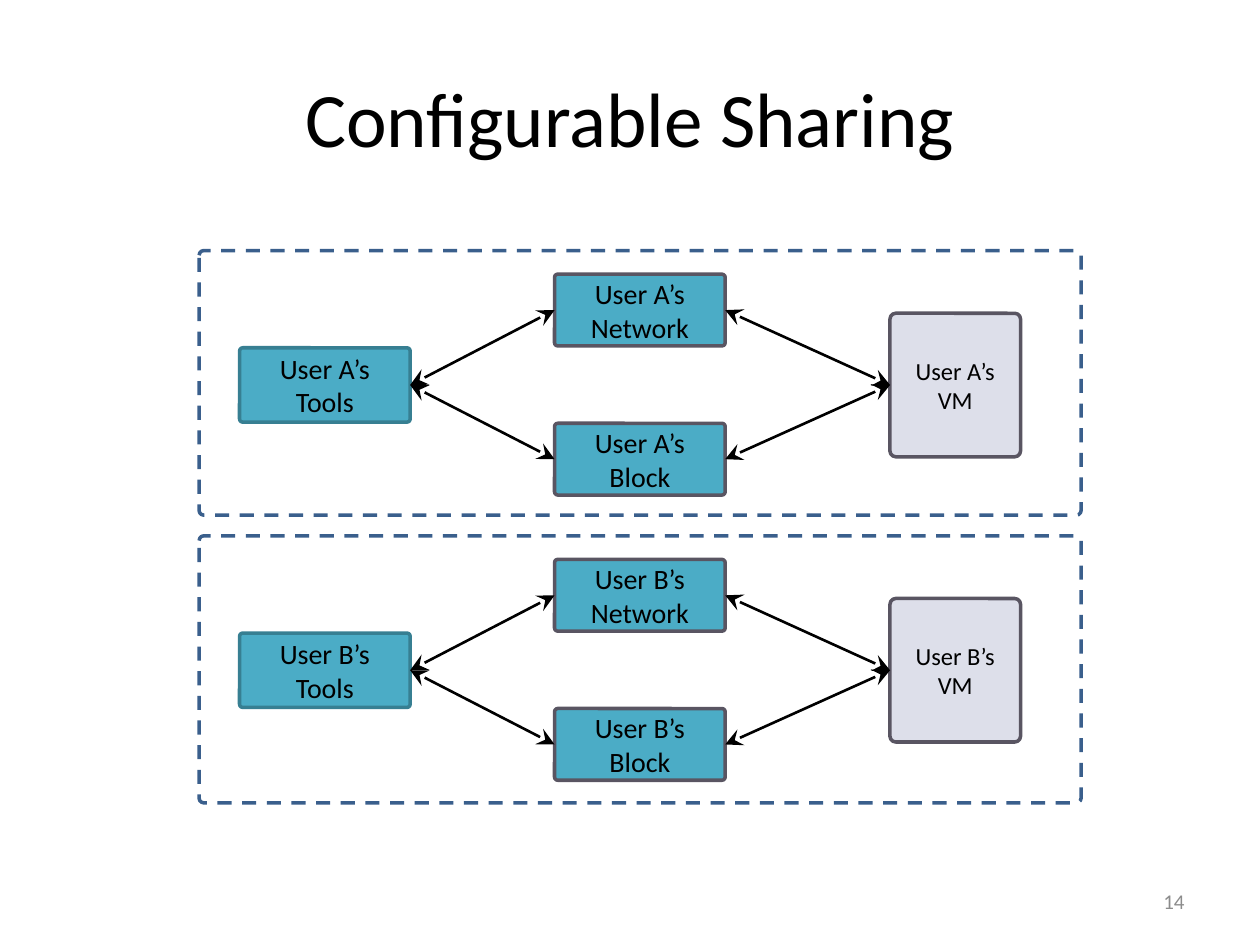
import pptx
import pptx.util
from lxml import etree
from pptx.dml.color import RGBColor
from pptx.enum.dml import MSO_LINE
from pptx.enum.shapes import MSO_CONNECTOR, MSO_SHAPE
from pptx.enum.text import MSO_ANCHOR, PP_ALIGN
from pptx.oxml.ns import qn

Pt = pptx.util.Pt

# Content
TITLE = "Configurable Sharing"
PAGE_NUMBER = "14"
USERS = [  # name, top of frame, height of frame
    ("A", 143.2, 151.2),
    ("B", 306.2, 152.6),
]
PARTS = {  # left, centre below frame top, width, height, fill, line, text size
    "Tools": (136.9, 76.8, 97.5, 42.5, "4BACC6", "377F92", 16),
    "Network": (316.9, 34.0, 97.5, 41, "4BACC6", "595562", 16),
    "Block": (316.9, 119.2, 97.5, 41, "4BACC6", "595562", 16),
    "VM": (508.6, 76.8, 74.6, 82, "DDDFEA", "595562", 14),
}
LINKS = [("Tools", "Network"), ("Tools", "Block"), ("Network", "VM"), ("Block", "VM")]
FRAME_LEFT, FRAME_WIDTH = 113.8, 504
LEFT_SITE, RIGHT_SITE = 1, 3


def colour(hex_code):
    return RGBColor.from_string(hex_code)


def write(frame, text, size=16, color="000000", align=PP_ALIGN.CENTER):
    frame.word_wrap = True
    frame.vertical_anchor = MSO_ANCHOR.MIDDLE
    paragraph = frame.paragraphs[0]
    paragraph.alignment = align
    run = paragraph.add_run()
    run.text = text
    run.font.name = "Calibri"
    run.font.size = Pt(size)
    run.font.color.rgb = colour(color)


def place(shape, left, top, width, height):
    shape.left, shape.top = Pt(left), Pt(top)
    shape.width, shape.height = Pt(width), Pt(height)


def rounded_box(left, top, width, height, line, fill=None, radius=0.044):
    box = slide.shapes.add_shape(
        MSO_SHAPE.ROUNDED_RECTANGLE, Pt(left), Pt(top), Pt(width), Pt(height))
    box.adjustments[0] = radius
    box.shadow.inherit = False
    if fill:
        box.fill.solid()
        box.fill.fore_color.rgb = colour(fill)
    else:
        box.fill.background()
    box.line.color.rgb = colour(line)
    box.line.width = Pt(2)
    return box


def double_arrow(start, end):
    arrow = slide.shapes.add_connector(MSO_CONNECTOR.STRAIGHT, 0, 0, 0, 0)
    arrow.begin_connect(start, RIGHT_SITE)
    arrow.end_connect(end, LEFT_SITE)
    arrow.line.color.rgb = colour("000000")
    arrow.line.width = Pt(1.5)
    outline = arrow.line._get_or_add_ln()
    for end_tag in ("a:headEnd", "a:tailEnd"):
        etree.SubElement(outline, qn(end_tag), type="stealth", w="lg", len="lg")
    etree.SubElement(arrow._element.spPr, qn("a:effectLst"))


presentation = pptx.Presentation()
presentation.slide_width, presentation.slide_height = Pt(720), Pt(540)
slide = presentation.slides.add_slide(presentation.slide_layouts[5])

# Title and page number
title = slide.shapes.title
place(title, 36, 21.6, 648, 90)
write(title.text_frame, TITLE, size=44)
page_number = slide.shapes.add_textbox(Pt(516), Pt(500.5), Pt(168), Pt(28.8))
write(page_number.text_frame, PAGE_NUMBER, size=12, color="8C8C8C", align=PP_ALIGN.RIGHT)

# One dashed frame per user, holding the same linked parts
for user, frame_top, frame_height in USERS:
    boxes = {}
    for part, (left, centre, width, height, fill, line, size) in PARTS.items():
        top = frame_top + centre - height / 2
        boxes[part] = rounded_box(left, top, width, height, line, fill)
        write(boxes[part].text_frame, f"User {user}’s {part}", size=size)
    for start, end in LINKS:
        double_arrow(boxes[start], boxes[end])
    user_frame = rounded_box(
        FRAME_LEFT, frame_top, FRAME_WIDTH, frame_height, "3A5F8C", radius=0.018)
    user_frame.line.dash_style = MSO_LINE.DASH

presentation.save("out.pptx")
